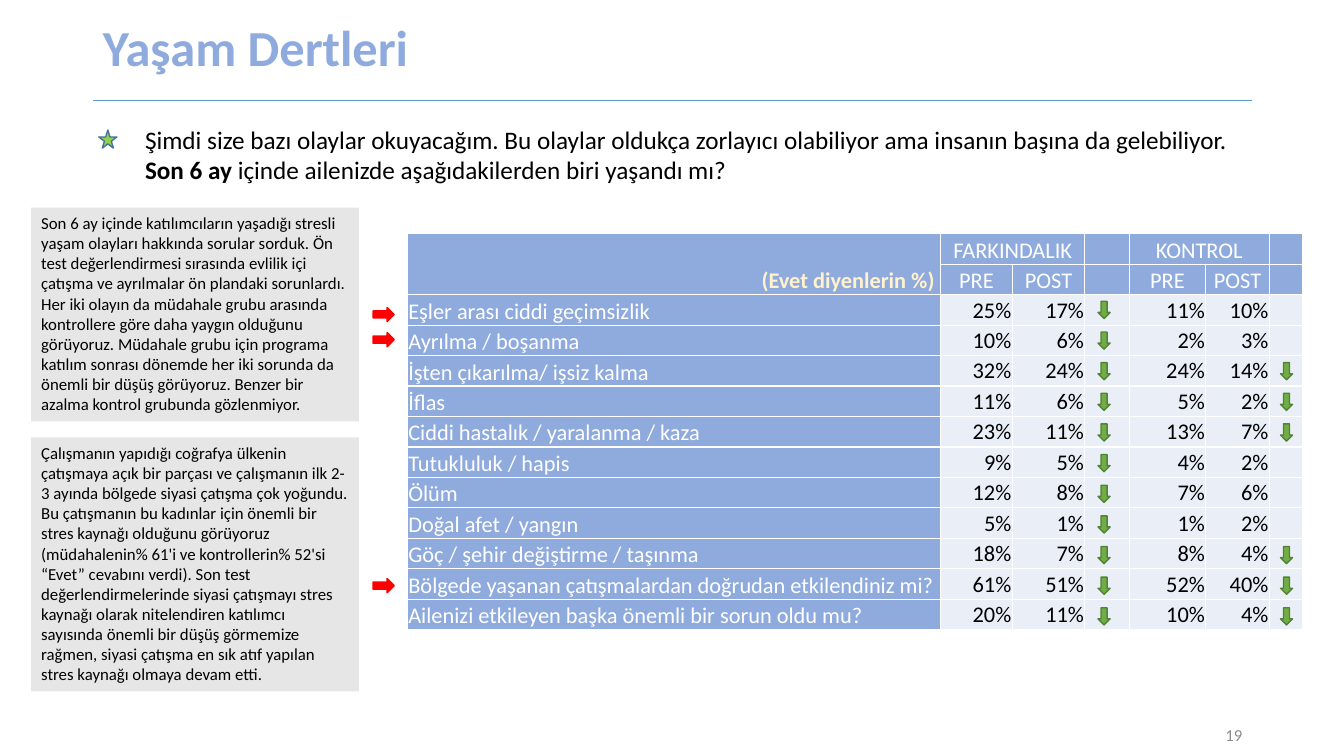
import pptx
import pptx.util
import pptx.dml.color
import pptx.enum.shapes
import pptx.enum.text
import lxml.etree
from pptx.oxml.ns import qn

RGB = pptx.dml.color.RGBColor
SHAPE = pptx.enum.shapes.MSO_SHAPE
ALIGN = pptx.enum.text.PP_ALIGN
ANCHOR = pptx.enum.text.MSO_ANCHOR
Inches, Pt = pptx.util.Inches, pptx.util.Pt

# Content
TITLE = "Yaşam Dertleri"
PAGE = "19"
QUESTION = [
    ("Şimdi size bazı olaylar okuyacağım. Bu olaylar oldukça zorlayıcı olabiliyor ama insanın başına da gelebiliyor. ", False),
    ("Son 6 ay", True),
    (" içinde ailenizde aşağıdakilerden biri yaşandı mı?", False),
]
COMMENTS = [  # top, height, text
    (2.06, 2.12, "Son 6 ay içinde katılımcıların yaşadığı stresli yaşam olayları hakkında sorular sorduk. "
     "Ön test değerlendirmesi sırasında evlilik içi çatışma ve ayrılmalar ön plandaki sorunlardı. "
     "Her iki olayın da müdahale grubu arasında kontrollere göre daha yaygın olduğunu görüyoruz. "
     "Müdahale grubu için programa katılım sonrası dönemde her iki sorunda da önemli bir düşüş görüyoruz. "
     "Benzer bir azalma kontrol grubunda gözlenmiyor."),
    (4.34, 2.52, "Çalışmanın yapıdığı coğrafya ülkenin çatışmaya açık bir parçası ve çalışmanın ilk 2-3 ayında "
     "bölgede siyasi çatışma çok yoğundu. Bu çatışmanın bu kadınlar için önemli bir stres kaynağı olduğunu "
     "görüyoruz (müdahalenin% 61'i ve kontrollerin% 52'si “Evet” cevabını verdi). Son test "
     "değerlendirmelerinde siyasi çatışmayı stres kaynağı olarak nitelendiren katılımcı sayısında önemli bir "
     "düşüş görmemize rağmen, siyasi çatışma en sık atıf yapılan stres kaynağı olmaya devam etti."),
]
HEADERS = [
    ["(Evet diyenlerin %)", "FARKINDALIK", "", "", "KONTROL", "", ""],
    ["", "PRE", "POST", "", "PRE", "POST", ""],
]
EVENTS = [  # event, awareness pre and post, control pre and post, control fell
    ("Eşler arası ciddi geçimsizlik", 25, 17, 11, 10, False),
    ("Ayrılma / boşanma", 10, 6, 2, 3, False),
    ("İşten çıkarılma/ işsiz kalma", 32, 24, 24, 14, True),
    ("İflas", 11, 6, 5, 2, True),
    ("Ciddi hastalık / yaralanma / kaza", 23, 11, 13, 7, True),
    ("Tutukluluk / hapis", 9, 5, 4, 2, False),
    ("Ölüm", 12, 8, 7, 6, False),
    ("Doğal afet / yangın", 5, 1, 1, 2, False),
    ("Göç / şehir değiştirme / taşınma", 18, 7, 8, 4, True),
    ("Bölgede yaşanan çatışmalardan doğrudan etkilendiniz mi?", 61, 51, 52, 40, True),
    ("Ailenizi etkileyen başka önemli bir sorun oldu mu?", 20, 11, 10, 4, True),
]
POINTER_TOPS = [3.05, 3.3, 5.74]

# Grid and colours
COLUMNS = [5.29, 0.71, 0.72, 0.44, 0.76, 0.63, 0.33]
TABLE_LEFT, TABLE_TOP, TABLE_HEIGHT = 4.04, 2.32, 3.93
ARROW_TOP, ARROW_STEP = 2.99, 0.304
AWARENESS_ARROW, CONTROL_ARROW = 10.89, 12.7
BLUE, PALE, CREAM = RGB(0x8F, 0xAA, 0xDC), RGB(0xEA, 0xEF, 0xF7), RGB(0xFF, 0xF2, 0xCC)
WHITE, BLACK, GREY = RGB(255, 255, 255), RGB(0, 0, 0), RGB(0x8C, 0x8C, 0x8C)
RULE, PANEL, RED = RGB(0x5B, 0x9B, 0xD5), RGB(0xE7, 0xE6, 0xE6), RGB(255, 0, 0)
GREEN, DARK_GREEN = RGB(0x70, 0xAD, 0x47), RGB(0x53, 0x81, 0x35)
LIME, STAR_EDGE = RGB(0x92, 0xD0, 0x50), RGB(0x43, 0x73, 0x9E)


def style(paragraph, size, color, bold=False, align=ALIGN.LEFT):
    paragraph.alignment = align
    font = paragraph.font
    font.name, font.size, font.bold = "Calibri", Pt(size), bold
    font.color.rgb = color


def add_shape(kind, left, top, width, height, fill, edge=None):
    shape = slide.shapes.add_shape(kind, *map(Inches, (left, top, width, height)))
    shape.shadow.inherit = False
    shape.fill.solid()
    shape.fill.fore_color.rgb = fill
    if edge is None:
        shape.line.fill.background()
    else:
        shape.line.color.rgb = edge
        shape.line.width = Pt(1)
    return shape


def add_borders(cell):
    properties = cell._tc.get_or_add_tcPr()
    for position, side in enumerate(("lnL", "lnR", "lnT", "lnB")):
        border = lxml.etree.Element(qn("a:" + side), w=str(Pt(1)))
        fill = lxml.etree.SubElement(border, qn("a:solidFill"))
        lxml.etree.SubElement(fill, qn("a:srgbClr"), val=str(WHITE))
        properties.insert(position, border)


def fill_cell(cell, text, row, column):
    is_header, is_label = row < len(HEADERS), column == 0
    is_unit = is_header and is_label
    cell.fill.solid()
    cell.fill.fore_color.rgb = BLUE if is_header or is_label else PALE
    cell.margin_left = cell.margin_top = Inches(0.01)
    cell.margin_right = Inches(0.06 if is_unit else 0.01)
    cell.margin_bottom = 0
    cell.vertical_anchor = ANCHOR.BOTTOM if is_header or is_label else ANCHOR.MIDDLE
    cell.text = text
    if is_label:
        align = ALIGN.RIGHT if is_header else ALIGN.LEFT
    else:
        align = ALIGN.CENTER if is_header else ALIGN.RIGHT
    color = CREAM if is_unit else WHITE if is_header or is_label else BLACK
    paragraph = cell.text_frame.paragraphs[0]
    style(paragraph, 16, color, is_unit, align)
    if not text:
        paragraph._p.get_or_add_endParaRPr().set("sz", "1600")
    add_borders(cell)


deck = pptx.Presentation()
deck.slide_width, deck.slide_height = Inches(13.33), Inches(7.5)
slide = deck.slides.add_slide(deck.slide_layouts[5])

# Title and rule
title = slide.shapes.title
title.left, title.top, title.width, title.height = map(Inches, (0.92, 0, 11.5, 1))
title.text_frame.text = TITLE
title.text_frame.vertical_anchor = ANCHOR.MIDDLE
heading = title.text_frame.paragraphs[0]
heading.line_spacing = 0.9
style(heading, 36, BLUE, True)
rule = slide.shapes.add_connector(pptx.enum.shapes.MSO_CONNECTOR.STRAIGHT,
                                  *map(Inches, (0.92, 1, 12.42, 1)))
rule.line.color.rgb = RULE
rule.line.width = Pt(0.5)
lxml.etree.SubElement(rule._element.spPr, qn("a:effectLst"))

# Page number
page = slide.shapes.add_textbox(*map(Inches, (9.42, 7.09, 3, 0.4))).text_frame
page.word_wrap = True
page.vertical_anchor = ANCHOR.MIDDLE
page.text = PAGE
style(page.paragraphs[0], 12, GREY, align=ALIGN.RIGHT)

# Table of events
rows = HEADERS + [
    [event, f"{pre}%", f"{post}%", "", f"{control_pre}%", f"{control_post}%", ""]
    for event, pre, post, control_pre, control_post, _ in EVENTS
]
table = slide.shapes.add_table(
    len(rows), len(COLUMNS),
    *map(Inches, (TABLE_LEFT, TABLE_TOP, sum(COLUMNS), TABLE_HEIGHT))).table
table.first_row = table.horz_banding = False
for column, width in zip(table.columns, COLUMNS):
    column.width = Inches(width)
for r, row in enumerate(rows):
    for c, text in enumerate(row):
        fill_cell(table.cell(r, c), text, r, c)
for first, last in (((0, 0), (1, 0)), ((0, 1), (0, 2)), ((0, 4), (0, 5))):
    table.cell(*first).merge(table.cell(*last))

# Question with its star
question = slide.shapes.add_textbox(*map(Inches, (1.34, 1.18, 10.95, 0.71))).text_frame
question.word_wrap = True
wording = question.paragraphs[0]
style(wording, 18, BLACK)
for text, bold in QUESTION:
    run = wording.add_run()
    run.text = text
    run.font.bold = bold
add_shape(SHAPE.STAR_5_POINT, 0.98, 1.29, 0.18, 0.18, LIME, STAR_EDGE)

# Arrows for each fall
for i, event in enumerate(EVENTS):
    for left in [AWARENESS_ARROW] + [CONTROL_ARROW] * event[-1]:
        add_shape(SHAPE.DOWN_ARROW, left, ARROW_TOP + i * ARROW_STEP, 0.12, 0.17, GREEN, DARK_GREEN)

# Pointers to the discussed rows
for top in POINTER_TOPS:
    add_shape(SHAPE.RIGHT_ARROW, 3.7, top, 0.21, 0.14, RED, RED)

# Comments
for top, height, text in COMMENTS:
    comment = add_shape(SHAPE.RECTANGLE, 0.31, top, 3.25, height, PANEL).text_frame
    comment.word_wrap = True
    comment.vertical_anchor = ANCHOR.TOP
    comment.text = text
    style(comment.paragraphs[0], 12, BLACK)

deck.save("out.pptx")
